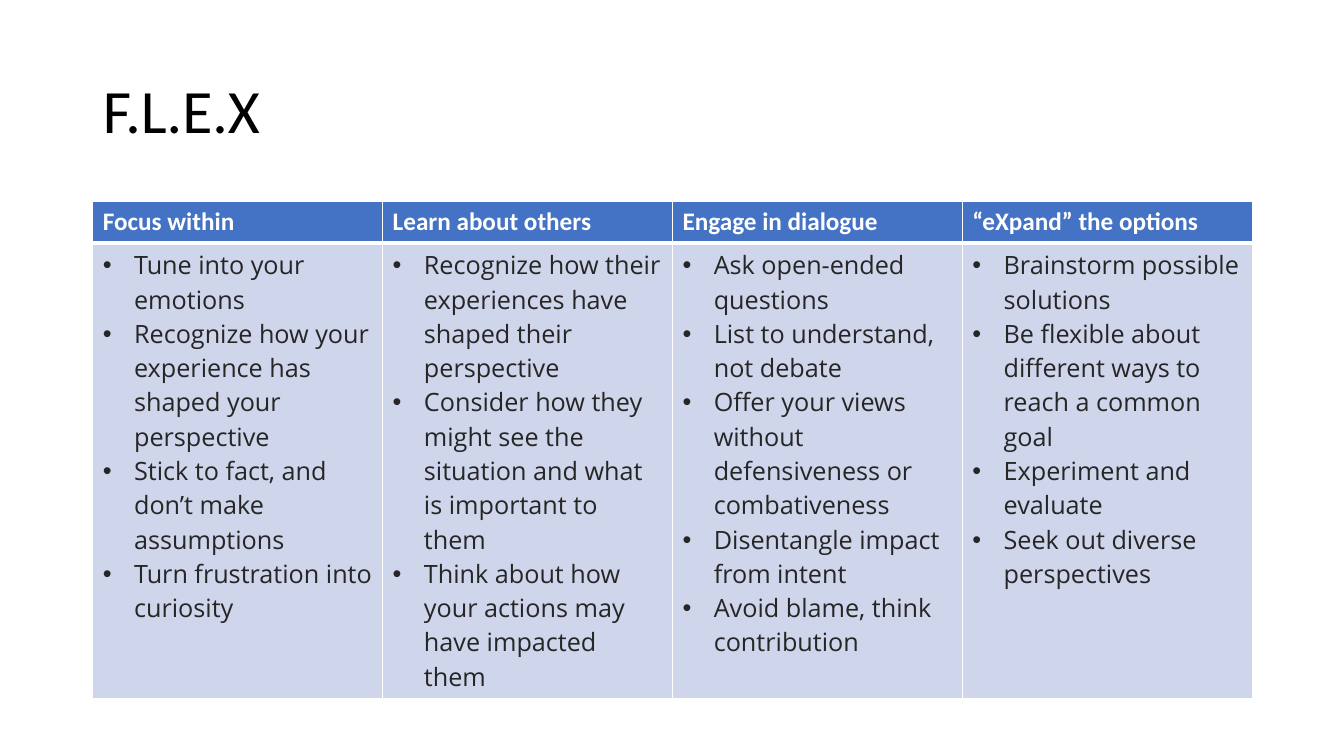
from dataclasses import dataclass

from lxml.etree import SubElement
from pptx import Presentation
from pptx.dml.color import RGBColor as Rgb
from pptx.enum.text import MSO_ANCHOR as Anchor, MSO_AUTO_SIZE as AutoSize, PP_ALIGN as Align
from pptx.oxml.ns import qn
from pptx.slide import Slide
from pptx.table import _Cell as Cell
from pptx.text.text import _Paragraph as Paragraph
from pptx.util import Inches, Pt

# Grid: four equal columns between the side margins
SLIDE_W, SLIDE_H = 13.33, 7.5
MARGIN = 0.92
COLUMN_W = 2.875
TITLE_TOP, TITLE_H = 0.4, 1.45
TABLE_TOP, HEADING_H, ACTIONS_H = 2.0, 0.41, 4.5
INDENT = 0.31

WHITE, BLACK, CHARCOAL = "FFFFFF", "000000", "262626"
BLUE, PALE_BLUE = "4472C4", "CFD5EA"


@dataclass(frozen=True)
class Step:
    heading: str
    actions: tuple[str, ...]


@dataclass(frozen=True)
class TextStyle:
    font: str
    size: float
    color: str
    bold: bool = False


TITLE = TextStyle("Calibri", 44, BLACK)
HEADING = TextStyle("Calibri", 18, WHITE, bold=True)
ACTION = TextStyle("Open Sans", 18, CHARCOAL)

STEPS = (
    Step("Focus within", (
        "Tune into your emotions",
        "Recognize how your experience has shaped your perspective",
        "Stick to fact, and don’t make assumptions",
        "Turn frustration into curiosity",
    )),
    Step("Learn about others", (
        "Recognize how their experiences have shaped their perspective",
        "Consider how they might see the situation and what is important to them",
        "Think about how your actions may have impacted them",
    )),
    Step("Engage in dialogue", (
        "Ask open-ended questions",
        "List to understand, not debate",
        "Offer your views without defensiveness or combativeness",
        "Disentangle impact from intent",
        "Avoid blame, think contribution",
    )),
    Step("“eXpand” the options", (
        "Brainstorm possible solutions",
        "Be flexible about different ways to reach a common goal",
        "Experiment and evaluate",
        "Seek out diverse perspectives",
    )),
)


def rgb(color: str) -> Rgb:
    return Rgb.from_string(color)


def add_run(paragraph: Paragraph, text: str, style: TextStyle) -> None:
    run = paragraph.add_run()
    run.text = text
    run.font.name = style.font
    run.font.size = Pt(style.size)
    run.font.bold = style.bold
    run.font.color.rgb = rgb(style.color)


def add_bullet(paragraph: Paragraph) -> None:
    properties = paragraph._p.get_or_add_pPr()
    properties.set("marL", str(Inches(INDENT)))
    properties.set("indent", str(-Inches(INDENT)))
    SubElement(properties, qn("a:buFont"), typeface="Arial")
    SubElement(properties, qn("a:buChar"), char="•")


def style_cell(cell: Cell, fill: str, top: float, bottom: float) -> None:
    # Borders precede the fill in the cell properties
    properties = cell._tc.get_or_add_tcPr()
    for side, width in (("L", 1), ("R", 1), ("T", top), ("B", bottom)):
        border = SubElement(properties, qn(f"a:ln{side}"), w=str(Pt(width)))
        paint = SubElement(border, qn("a:solidFill"))
        SubElement(paint, qn("a:srgbClr"), val=WHITE)
    cell.fill.solid()
    cell.fill.fore_color.rgb = rgb(fill)


def add_title(slide: Slide, text: str) -> None:
    title = slide.shapes.title
    title.left, title.top = Inches(MARGIN), Inches(TITLE_TOP)
    title.width, title.height = Inches(COLUMN_W * len(STEPS)), Inches(TITLE_H)
    frame = title.text_frame
    frame.auto_size = AutoSize.NONE
    frame.vertical_anchor = Anchor.MIDDLE
    paragraph = frame.paragraphs[0]
    paragraph.alignment = Align.LEFT
    paragraph.line_spacing = 0.9
    add_run(paragraph, text, TITLE)


def add_steps(slide: Slide, steps: tuple[Step, ...]) -> None:
    table = slide.shapes.add_table(
        2, len(steps), Inches(MARGIN), Inches(TABLE_TOP),
        Inches(COLUMN_W * len(steps)), Inches(HEADING_H + ACTIONS_H),
    ).table
    for row, height in zip(table.rows, (HEADING_H, ACTIONS_H)):
        row.height = Inches(height)

    for column, step in enumerate(steps):
        table.columns[column].width = Inches(COLUMN_W)
        heading, actions = table.cell(0, column), table.cell(1, column)
        style_cell(heading, BLUE, top=1, bottom=3)
        style_cell(actions, PALE_BLUE, top=3, bottom=1)
        add_run(heading.text_frame.paragraphs[0], step.heading, HEADING)
        for index, action in enumerate(step.actions):
            frame = actions.text_frame
            paragraph = frame.add_paragraph() if index else frame.paragraphs[0]
            add_bullet(paragraph)
            add_run(paragraph, action, ACTION)


def main() -> None:
    deck = Presentation()
    deck.slide_width, deck.slide_height = Inches(SLIDE_W), Inches(SLIDE_H)
    slide = deck.slides.add_slide(deck.slide_layouts.get_by_name("Title Only"))
    add_title(slide, "F.L.E.X")
    add_steps(slide, STEPS)
    deck.save("out.pptx")


if __name__ == "__main__":
    main()
